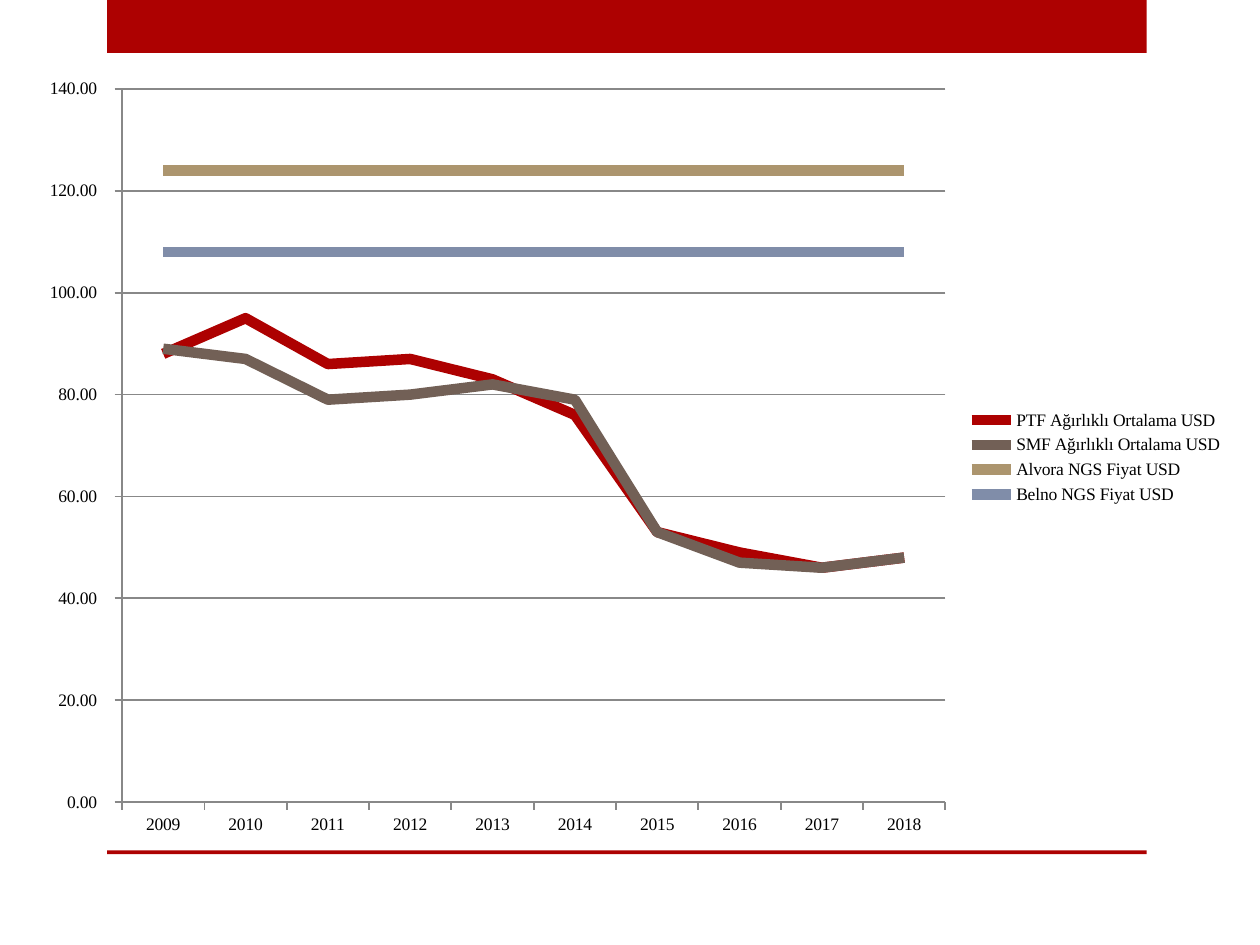
"""Build a slide with a line chart of yearly power prices between two red bars."""
from lxml import etree
from pptx import Presentation, util as u
from pptx.chart.data import CategoryChartData
from pptx.dml.color import RGBColor
from pptx.enum import chart as ch, shapes
from pptx.oxml import ns

RED, GREY = "AD0101", "888888"
YEARS = range(2009, 2019)
PRICES = [
    ("PTF Ağırlıklı Ortalama USD", RED, [88, 95, 86, 87, 83, 76, 53, 49, 46, 48]),
    ("SMF Ağırlıklı Ortalama USD", "726056", [89, 87, 79, 80, 82, 79, 53, 47, 46, 48]),
    ("Alvora NGS Fiyat USD", "AC956E", [124] * len(YEARS)),
    ("Belno NGS Fiyat USD", "808DA9", [108] * len(YEARS)),
]
PLOT = {"x": 0.08, "y": 0.03, "w": 0.68, "h": 0.91}


def paint(part, color):
    part.solid()
    part.fore_color.rgb = RGBColor.from_string(color)


def stroke(line, color, width):
    paint(line.fill, color)
    line.width = u.Pt(width)


deck = Presentation()
deck.slide_width, deck.slide_height = u.Inches(10), u.Inches(7.5)
slide = deck.slides.add_slide(deck.slide_layouts[6])

for top, height in [(0, 0.42), (6.75, 0.03)]:
    box = [u.Inches(n) for n in (0.85, top, 8.25, height)]
    bar = slide.shapes.add_shape(shapes.MSO_SHAPE.RECTANGLE, *box)
    bar.shadow.inherit = False
    paint(bar.fill, RED)
    bar.line.fill.background()

data = CategoryChartData(number_format="#,##0.00")
data.categories = [str(year) for year in YEARS]
for name, color, values in PRICES:
    data.add_series(name, values)

box = [u.Inches(n) for n in (0.2, 0.52, 9.61, 6.22)]
chart = slide.shapes.add_chart(ch.XL_CHART_TYPE.LINE, *box, data).chart
chart.has_title = False
chart.font.name, chart.font.size = "Times New Roman", u.Pt(10)
paint(chart.font.fill, "000000")
chart.has_legend = True
chart.legend.position = ch.XL_LEGEND_POSITION.RIGHT
chart.legend.include_in_layout = False

plot = chart.plots[0]
plot.vary_by_categories = False
for line, (name, color, values) in zip(plot.series, PRICES):
    line.smooth = False
    line.marker.style = ch.XL_MARKER_STYLE.NONE
    stroke(line.format.line, color, 6)

for axis in (chart.category_axis, chart.value_axis):
    axis.major_tick_mark = ch.XL_TICK_MARK.OUTSIDE
    axis.minor_tick_mark = ch.XL_TICK_MARK.NONE
    stroke(axis.format.line, GREY, 1)

axis = chart.value_axis
axis.minimum_scale, axis.maximum_scale, axis.major_unit = 0, 140, 20
axis.has_major_gridlines = True
stroke(axis.major_gridlines.format.line, GREY, 1)
axis.tick_labels.number_format = "#,##0.00\\ _₺"
axis.tick_labels.number_format_is_linked = False

area = chart.element.find(".//" + ns.qn("c:plotArea"))
for old in area.findall(ns.qn("c:layout")):
    area.remove(old)
frame = etree.Element(ns.qn("c:layout"))
area.insert(0, frame)
manual = etree.SubElement(frame, ns.qn("c:manualLayout"))
rules = {"layoutTarget": "inner", "xMode": "edge", "yMode": "edge", **PLOT}
for tag, value in rules.items():
    etree.SubElement(manual, ns.qn("c:" + tag)).set("val", str(value))

deck.save("out.pptx")
